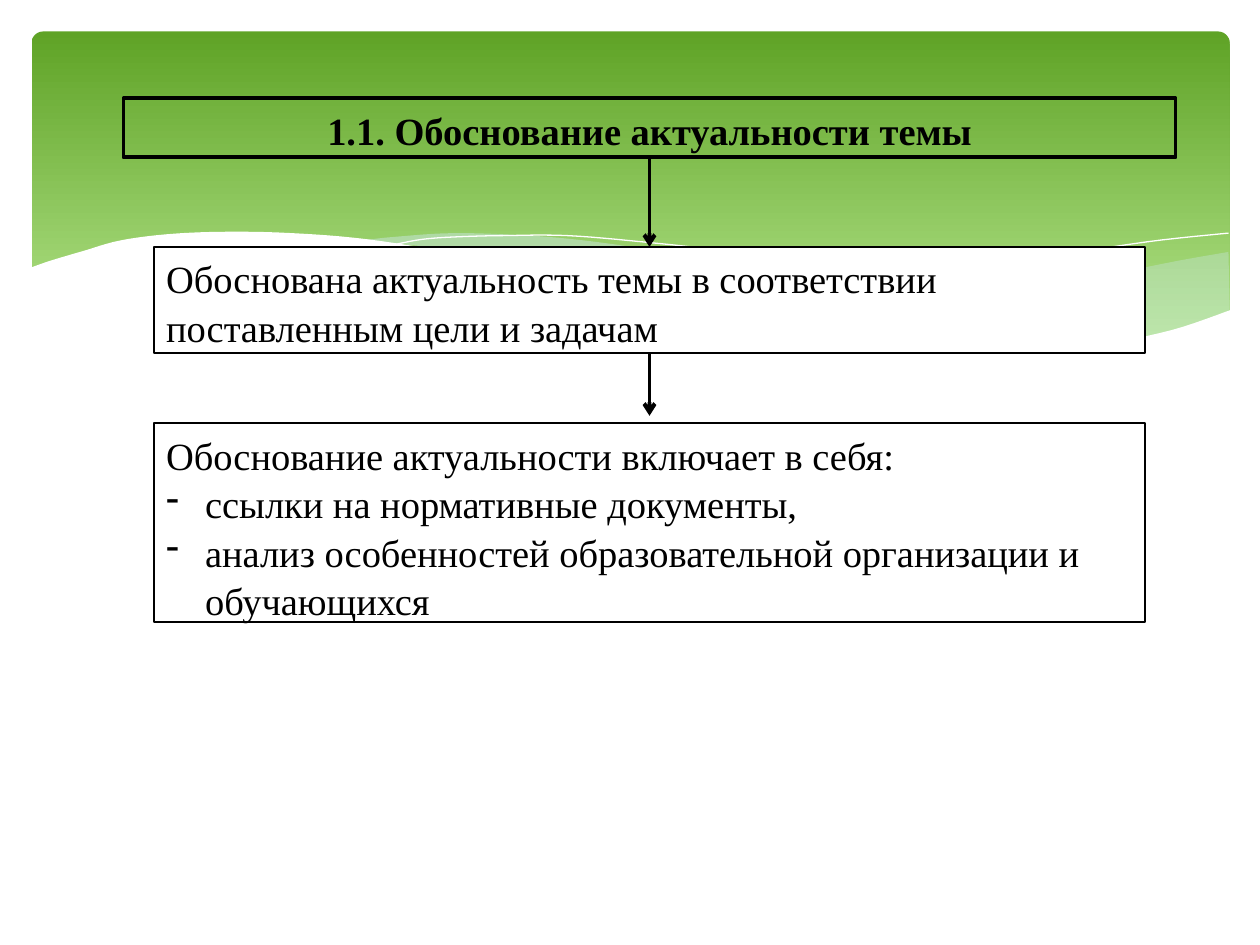
from lxml.etree import SubElement
from pptx import Presentation
from pptx.dml.color import RGBColor
from pptx.enum.dml import MSO_FILL
from pptx.enum.shapes import MSO_CONNECTOR, MSO_SHAPE
from pptx.enum.text import MSO_ANCHOR, MSO_AUTO_SIZE, PP_ALIGN
from pptx.oxml.ns import qn
from pptx.util import Inches, Pt

BLACK = RGBColor(0x00, 0x00, 0x00)
WHITE = RGBColor(0xFF, 0xFF, 0xFF)
DARK_GREEN = RGBColor(0x5F, 0xA3, 0x26)
LIGHT_GREEN = RGBColor(0xB2, 0xE3, 0x89)
PALE_BLUE = RGBColor(0xD6, 0xEC, 0xFF)

SLIDE_WIDTH, SLIDE_HEIGHT = Inches(10), Inches(7.5)
COLUMNS = 1000
CELL = SLIDE_WIDTH // COLUMNS

BAND_BOX = (25, 25, 951, 270)
TITLE_BOX = (98, 78, 835, 47)
STATEMENT_BOX = (122, 196, 787, 84)
CONTENTS_BOX = (122, 336, 787, 158)
ARROW_GAP = 6

TITLE = "1.1. Обоснование актуальности темы"
STATEMENT = ["Обоснована актуальность темы в соответствии поставленным цели и задачам"]
CONTENTS = ["Обоснование актуальности включает в себя:"]
CONTENTS_BULLETS = [
    "ссылки на нормативные документы,",
    "анализ особенностей образовательной организации и обучающихся",
]

TEXT_FORMAT = {"name": "Times New Roman", "size": Pt(22), "bold": False}
TITLE_FORMAT = {**TEXT_FORMAT, "bold": True}
FRAME_FORMAT = {
    "word_wrap": True,
    "auto_size": MSO_AUTO_SIZE.NONE,
    "vertical_anchor": MSO_ANCHOR.TOP,
}

RIGHT_TOP = [(950, 175), (910, 182), (866, 191), (836, 198), (754, 217), (704, 228), (636, 240)]
RIGHT_BOTTOM = [(636, 240), (694, 247), (756, 252), (803, 253), (856, 250), (903, 242),
                (938, 232), (951, 222)]
MIDDLE_TOP = [(261, 166), (288, 163), (336, 160), (395, 162), (440, 166), (489, 173),
              (544, 183), (604, 197), (681, 215), (750, 229), (812, 240), (868, 248)]
MIDDLE_BOTTOM = [(868, 248), (823, 252), (771, 253), (711, 250), (640, 241), (541, 223),
                 (466, 207), (402, 191), (337, 174), (261, 166)]
FALLING_LINE = [(284, 170), (310, 165), (338, 163), (376, 162), (425, 162), (485, 167),
                (557, 175), (640, 188), (735, 208), (844, 236), (882, 247)]
RISING_LINE = [(588, 232), (647, 216), (723, 198), (811, 179), (885, 167), (950, 160)]
FRONT_TOP = [(952, 221), (905, 237), (850, 248), (798, 252), (736, 250), (663, 243),
             (578, 229), (478, 208), (422, 195), (340, 177), (267, 165), (205, 160),
             (152, 159), (107, 161), (70, 166), (42, 174), (15, 182), (-2, 188)]
FRONT_BOTTOM = [(-2, 304), (952, 304)]


def set_attributes(target, values):
    """Set each named attribute of the target."""
    for name, value in values.items():
        setattr(target, name, value)


def place(shape, box):
    """Move and size a shape to a box given in grid cells."""
    for name, cells in zip(("left", "top", "width", "height"), box):
        setattr(shape, name, cells * CELL)


def smooth(knots, steps=6):
    """Return points of a Catmull-Rom curve through the knots."""
    padded = [knots[0], *knots, knots[-1]]
    points = [knots[0]]
    for before, start, end, after in zip(padded, padded[1:], padded[2:], padded[3:]):
        for step in range(1, steps + 1):
            t = step / steps
            points.append(tuple(
                0.5 * (2 * b + (c - a) * t + (2 * a - 5 * b + 4 * c - d) * t ** 2
                       + (3 * b - a - 3 * c + d) * t ** 3)
                for a, b, c, d in zip(before, start, end, after)))
    return points


def add_wave(slide, box, points, color=None, opacity=100):
    """Draw a filled wave, or a thin white line when no colour is given."""
    left, top = box[:2]
    scaled = [((left + x) * CELL, (top + y) * CELL) for x, y in points]
    builder = slide.shapes.build_freeform(*scaled[0], scale=1.0)
    builder.add_line_segments(scaled[1:], close=color is not None)
    wave = builder.convert_to_shape()
    wave.shadow.inherit = False
    if color is None:
        wave.fill.background()
        wave.line.color.rgb = WHITE
        wave.line.width = Pt(0)
        return
    wave.line.fill.background()
    wave.fill.solid()
    wave.fill.fore_color.rgb = color
    if opacity < 100:
        color_element = wave._element.spPr.find(qn("a:solidFill"))[0]
        SubElement(color_element, qn("a:alpha"), val=str(opacity * 1000))


def add_wave_band(slide, box):
    """Draw the green band with its waves inside the box."""
    band = slide.shapes.add_shape(MSO_SHAPE.ROUNDED_RECTANGLE, 0, 0, 0, 0)
    place(band, box)
    band.adjustments[0] = 0.034
    band.shadow.inherit = False
    band.line.fill.background()
    band.fill.gradient()
    band.fill.gradient_angle = 270
    stops = zip(band.fill.gradient_stops, (DARK_GREEN, LIGHT_GREEN), (0, 0.9))
    for stop, color, position in stops:
        stop.color.rgb = color
        stop.position = position
    add_wave(slide, box, smooth(RIGHT_TOP) + smooth(RIGHT_BOTTOM), PALE_BLUE, 29)
    add_wave(slide, box, smooth(MIDDLE_TOP) + smooth(MIDDLE_BOTTOM), PALE_BLUE, 40)
    add_wave(slide, box, smooth(FALLING_LINE))
    add_wave(slide, box, smooth(RISING_LINE))
    add_wave(slide, box, smooth(FRONT_TOP) + FRONT_BOTTOM, WHITE)


def format_paragraph(paragraph, text, text_format, alignment):
    """Write one paragraph in the given format."""
    paragraph.text = text
    set_attributes(paragraph, {"alignment": alignment, "line_spacing": 1.05})
    set_attributes(paragraph.font, text_format)
    paragraph.font.color.rgb = BLACK


def add_dash(paragraph):
    """Give the paragraph a hanging dash bullet."""
    properties = paragraph._p.get_or_add_pPr()
    properties.set("marL", str(Inches(0.31)))
    properties.set("indent", str(-Inches(0.31)))
    bullet = properties.makeelement(qn("a:buChar"), {"char": "-"})
    properties.insert_element_before(bullet, "a:tabLst", "a:defRPr", "a:extLst")


def add_title(slide, box):
    """Frame the title placeholder in the box, in front of the band."""
    title = slide.shapes.title
    slide.shapes._spTree.append(title._element)
    place(title, box)
    title.line.color.rgb = BLACK
    title.line.width = Pt(2.25)
    set_attributes(title.text_frame, FRAME_FORMAT)
    paragraph = title.text_frame.paragraphs[0]
    format_paragraph(paragraph, TITLE, TITLE_FORMAT, PP_ALIGN.CENTER)
    paragraph.space_before = Pt(2.5)
    return title


def add_text_panel(slide, box, lines, bullets=()):
    """Draw a white panel with plain lines followed by bulleted lines."""
    panel = slide.shapes.add_shape(MSO_SHAPE.RECTANGLE, 0, 0, 0, 0)
    place(panel, box)
    panel.shadow.inherit = False
    panel.fill.solid()
    panel.fill.fore_color.rgb = WHITE
    panel.line.color.rgb = BLACK
    panel.line.width = Pt(1.25)
    frame = panel.text_frame
    set_attributes(frame, FRAME_FORMAT)
    for index, text in enumerate([*lines, *bullets]):
        paragraph = frame.add_paragraph() if index else frame.paragraphs[0]
        format_paragraph(paragraph, text, TEXT_FORMAT, PP_ALIGN.LEFT)
        if index >= len(lines):
            add_dash(paragraph)
    return panel


def add_arrow(slide, upper, lower, gap=0):
    """Lead an arrow down from one box to the next, stopping at the gap."""
    center = upper.left + upper.width // 2
    arrow = slide.shapes.add_connector(
        MSO_CONNECTOR.STRAIGHT, center, upper.top + upper.height, center, lower.top - gap * CELL)
    arrow.begin_connect(upper, 2)
    if not gap:
        arrow.end_connect(lower, 0)
    arrow.line.color.rgb = BLACK
    arrow.line.width = Pt(2.25)
    SubElement(arrow.line._get_or_add_ln(), qn("a:tailEnd"), type="arrow")
    SubElement(arrow._element.spPr, qn("a:effectLst"))


def main():
    """Build the slide and save it."""
    presentation = Presentation()
    set_attributes(presentation, {"slide_width": SLIDE_WIDTH, "slide_height": SLIDE_HEIGHT})
    slide = presentation.slides.add_slide(presentation.slide_layouts.get_by_name("Title Only"))
    add_wave_band(slide, BAND_BOX)
    title = add_title(slide, TITLE_BOX)
    statement = add_text_panel(slide, STATEMENT_BOX, STATEMENT)
    contents = add_text_panel(slide, CONTENTS_BOX, CONTENTS, CONTENTS_BULLETS)
    add_arrow(slide, title, statement)
    add_arrow(slide, statement, contents, ARROW_GAP)
    presentation.save("out.pptx")


if __name__ == "__main__":
    main()
